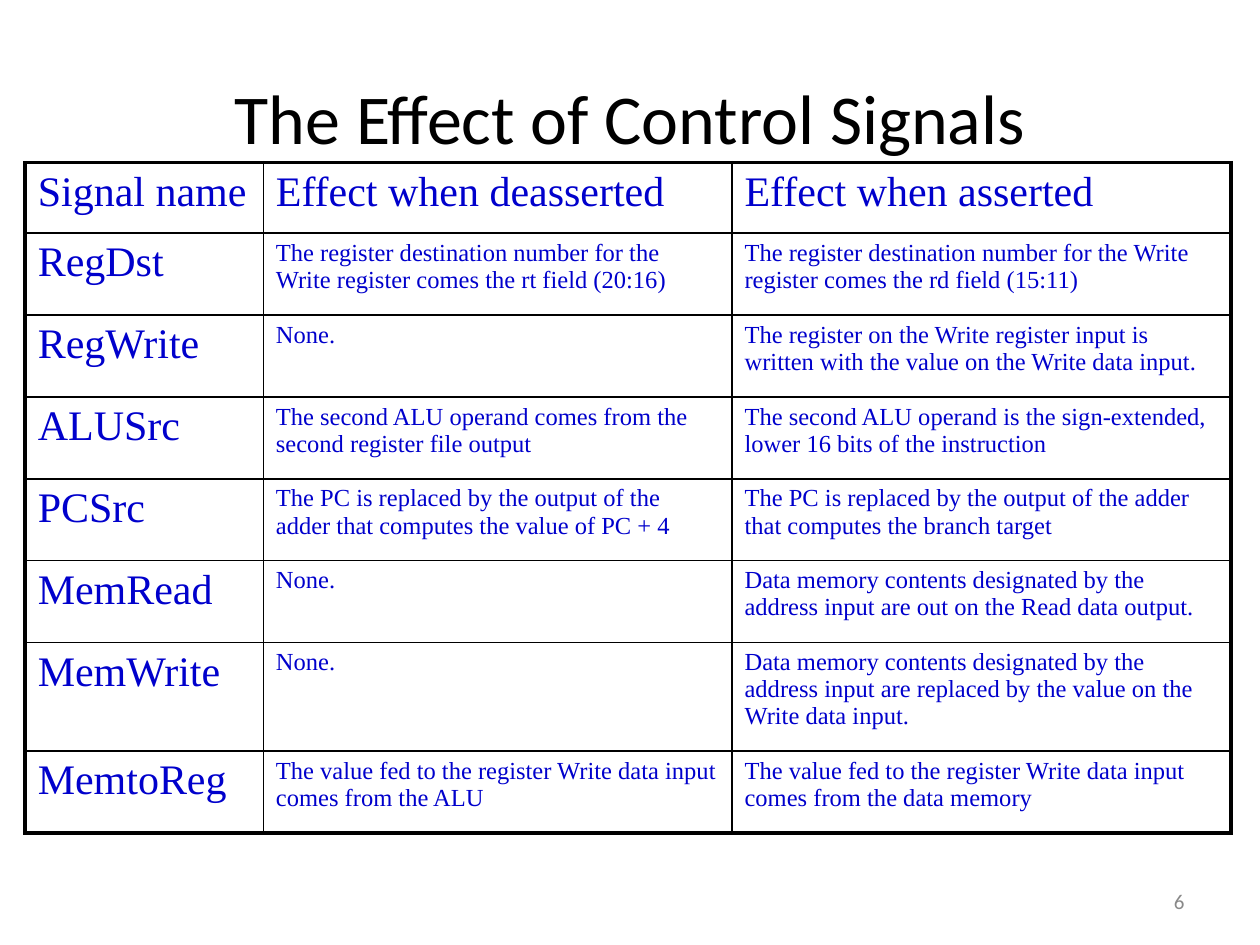
from lxml import etree
from pptx import Presentation
from pptx.dml.color import RGBColor
from pptx.enum.text import MSO_ANCHOR, PP_ALIGN
from pptx.oxml.ns import qn
from pptx.util import Inches, Pt

MIDDLE = MSO_ANCHOR.MIDDLE
LEFT, CENTER, RIGHT = PP_ALIGN.LEFT, PP_ALIGN.CENTER, PP_ALIGN.RIGHT
BLACK = RGBColor(0x00, 0x00, 0x00)
GRAY = RGBColor(0x89, 0x89, 0x89)
BLUE = RGBColor(0x00, 0x00, 0xCC)
THIN, THICK = Pt(1), Pt(2.25)

COLUMN_WIDTHS = [1.89, 3.72, 3.96]
ROW_HEIGHTS = [0.56] + [0.65] * 5 + [0.86, 0.65]
SIGNALS = [
    ("Signal name", "Effect when deasserted", "Effect when asserted"),
    ("RegDst",
     "The register destination number for the Write register comes the rt field (20:16)",
     "The register destination number for the Write register comes the rd field (15:11)"),
    ("RegWrite", "None.",
     "The register on the Write register input is written with the value on the Write data input."),
    ("ALUSrc",
     "The second ALU operand comes from the second register file output",
     "The second ALU operand is the sign-extended, lower 16 bits of the instruction"),
    ("PCSrc",
     "The PC is replaced by the output of the adder that computes the value of PC + 4",
     "The PC is replaced by the output of the adder that computes the branch target"),
    ("MemRead", "None.",
     "Data memory contents designated by the address input are out on the Read data output."),
    ("MemWrite", "None.",
     "Data memory contents designated by the address input are replaced by the value on the Write data input."),
    ("MemtoReg",
     "The value fed to the register Write data input comes from the ALU",
     "The value fed to the register Write data input comes from the data memory"),
]


def write_text(text_frame, text, size, font="Calibri", color=BLACK, align=LEFT):
    text_frame.word_wrap = True
    paragraph = text_frame.paragraphs[0]
    paragraph.alignment = align
    run = paragraph.add_run()
    run.text = text
    run.font.size = Pt(size)
    run.font.name = font
    run.font.color.rgb = color


def set_borders(cell, **widths):
    properties = cell._tc.get_or_add_tcPr()
    for side, width in widths.items():
        line = etree.SubElement(properties, qn(f"a:ln{side}"), w=str(width))
        fill = etree.SubElement(line, qn("a:solidFill"))
        etree.SubElement(fill, qn("a:srgbClr"), val=str(BLACK))


presentation = Presentation()
presentation.slide_width = Inches(10)
presentation.slide_height = Inches(7.5)
slide = presentation.slides.add_slide(presentation.slide_layouts[6])

page_number = slide.shapes.add_textbox(Inches(7.17), Inches(6.95), Inches(2.33), Inches(0.4))
page_number.text_frame.vertical_anchor = MIDDLE
write_text(page_number.text_frame, "6", 12, color=GRAY, align=RIGHT)

title = slide.shapes.add_textbox(Inches(0.5), Inches(0.3), Inches(9), Inches(1.25))
title.text_frame.vertical_anchor = MIDDLE
write_text(title.text_frame, "The Effect of Control Signals", 40, align=CENTER)

last_row, last_column = len(ROW_HEIGHTS) - 1, len(COLUMN_WIDTHS) - 1
table = slide.shapes.add_table(
    len(ROW_HEIGHTS), len(COLUMN_WIDTHS), Inches(0.2), Inches(1.29),
    Inches(sum(COLUMN_WIDTHS)), Inches(sum(ROW_HEIGHTS))).table
table.first_row = False
table.horz_banding = False
for column, width in zip(table.columns, COLUMN_WIDTHS):
    column.width = Inches(width)
for row, height in zip(table.rows, ROW_HEIGHTS):
    row.height = Inches(height)

for row_index, texts in enumerate(SIGNALS):
    for column_index, text in enumerate(texts):
        cell = table.cell(row_index, column_index)
        size = 24 if row_index == 0 or column_index == 0 else 14
        write_text(cell.text_frame, text, size, font="Times New Roman", color=BLUE)
        set_borders(
            cell,
            L=THICK if column_index == 0 else THIN,
            R=THICK if column_index == last_column else THIN,
            T=THICK if row_index == 0 else THIN,
            B=THICK if row_index == last_row else THIN)
        cell.fill.background()

presentation.save("out.pptx")
